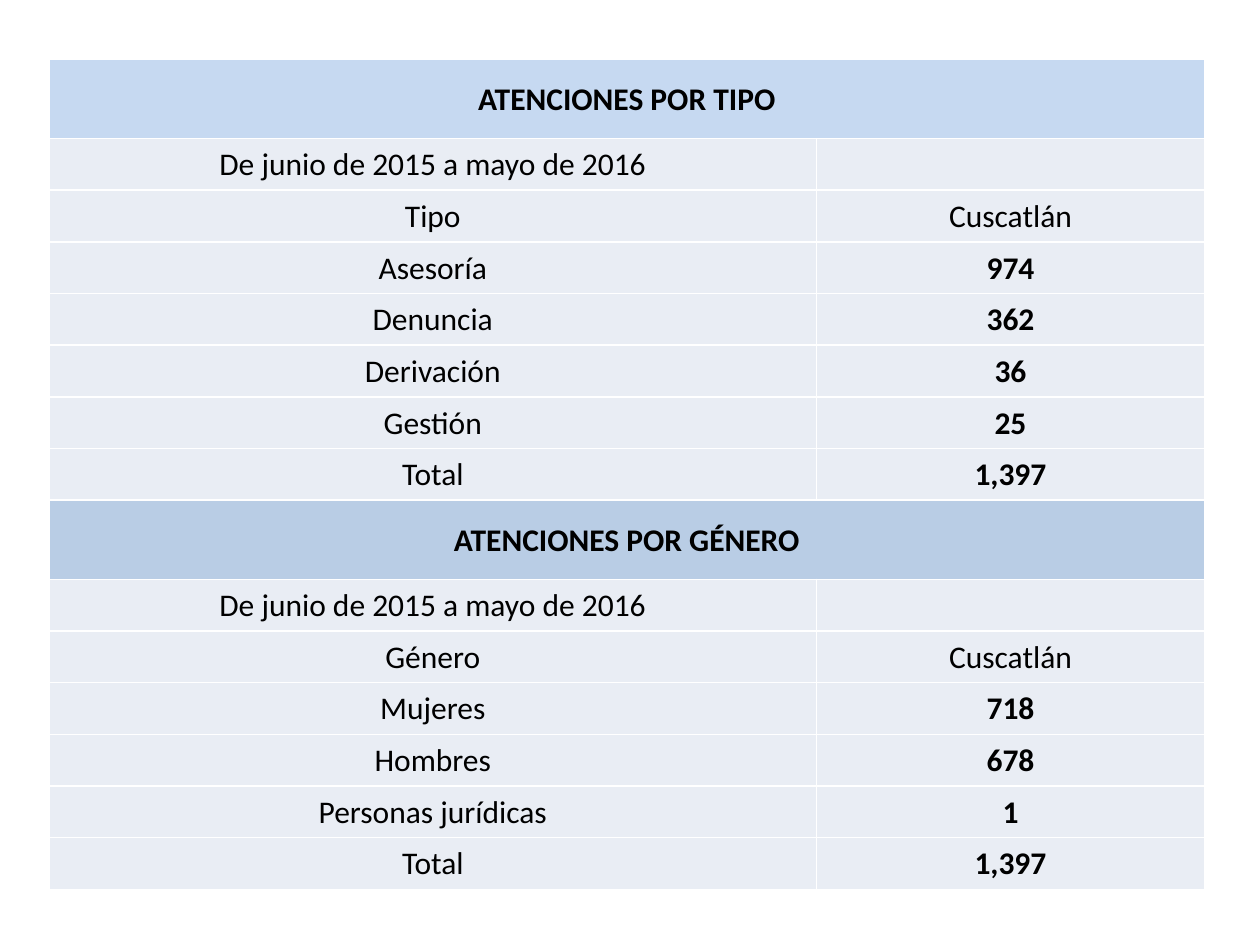
from lxml import etree
from pptx import Presentation
from pptx import util as u
from pptx.dml.color import RGBColor
from pptx.enum import text
from pptx.oxml.ns import qn

COLORS = {
    "type_band": "C6D9F1",
    "gender_band": "B9CDE5",
    "body": "E9EDF4",
    "text": "000000",
    "border": "FFFFFF",
}
PERIOD = "De junio de 2015 a mayo de 2016"
PLACE = "Cuscatlán"

# Heading, band colour, name of the first column, counts
SECTIONS = [
    ("ATENCIONES POR TIPO", "type_band", "Tipo",
     [("Asesoría", "974"), ("Denuncia", "362"), ("Derivación", "36"),
      ("Gestión", "25"), ("Total", "1,397")]),
    ("ATENCIONES POR GÉNERO", "gender_band", "Género",
     [("Mujeres", "718"), ("Hombres", "678"), ("Personas jurídicas", "1"),
      ("Total", "1,397")]),
]
LEFT, TOP = 0.39, 0.47
COL_WIDTHS = (6.09, 3.08)
BAND_HEIGHT, ROW_HEIGHT = 0.63, 0.41


def set_borders(cell, color="border", width=1):
    tc_pr = cell._tc.get_or_add_tcPr()
    for side in ("lnL", "lnR", "lnT", "lnB"):
        ln = etree.SubElement(tc_pr, qn(f"a:{side}"), w=str(u.Pt(width)))
        fill = etree.SubElement(ln, qn("a:solidFill"))
        etree.SubElement(fill, qn("a:srgbClr"), val=COLORS[color])


def write(cell, content, size=18, bold=False, font="Calibri", color="text"):
    p = cell.text_frame.paragraphs[0]
    p.alignment = text.PP_ALIGN.CENTER
    r = p.add_run()
    r.text = content
    r.font.size = u.Pt(size)
    r.font.bold = bold
    r.font.name = font
    r.font.color.rgb = RGBColor.from_string(COLORS[color])


def style_cell(cell, fill):
    set_borders(cell)
    cell.fill.solid()
    cell.fill.fore_color.rgb = RGBColor.from_string(COLORS[fill])
    cell.vertical_anchor = text.MSO_ANCHOR.MIDDLE
    cell.margin_left = cell.margin_right = cell.margin_top = u.Inches(0.01)
    cell.margin_bottom = 0


def fill_row(table, i, values, fill="body", height=ROW_HEIGHT, bold=(False, False)):
    table.rows[i].height = u.Inches(height)
    for cell, value, is_bold in zip(table.rows[i].cells, values, bold):
        style_cell(cell, fill)
        if value:
            write(cell, value, bold=is_bold)


def add_attention_table(slide):
    # A section has a band, a period row, a header row and its counts
    n_rows = sum(3 + len(counts) for *_, counts in SECTIONS)
    height = len(SECTIONS) * BAND_HEIGHT + (n_rows - len(SECTIONS)) * ROW_HEIGHT
    table = slide.shapes.add_table(
        n_rows, len(COL_WIDTHS), u.Inches(LEFT), u.Inches(TOP),
        u.Inches(sum(COL_WIDTHS)), u.Inches(height)).table
    table.first_row = table.horz_banding = False
    for column, width in zip(table.columns, COL_WIDTHS):
        column.width = u.Inches(width)

    i = 0
    for heading, band, label, counts in SECTIONS:
        # Heading band across both columns
        fill_row(table, i, (heading, ""), band, BAND_HEIGHT, (True, True))
        table.cell(i, 0).merge(table.cell(i, 1))
        # Period and column names
        fill_row(table, i + 1, (PERIOD, ""))
        fill_row(table, i + 2, (label, PLACE))
        # Counts
        i += 3
        for row in counts:
            fill_row(table, i, row, bold=(False, True))
            i += 1


def main():
    prs = Presentation()
    prs.slide_width, prs.slide_height = u.Inches(10), u.Inches(7.5)
    slide = prs.slides.add_slide(prs.slide_layouts[6])
    add_attention_table(slide)
    prs.save("out.pptx")


if __name__ == "__main__":
    main()
